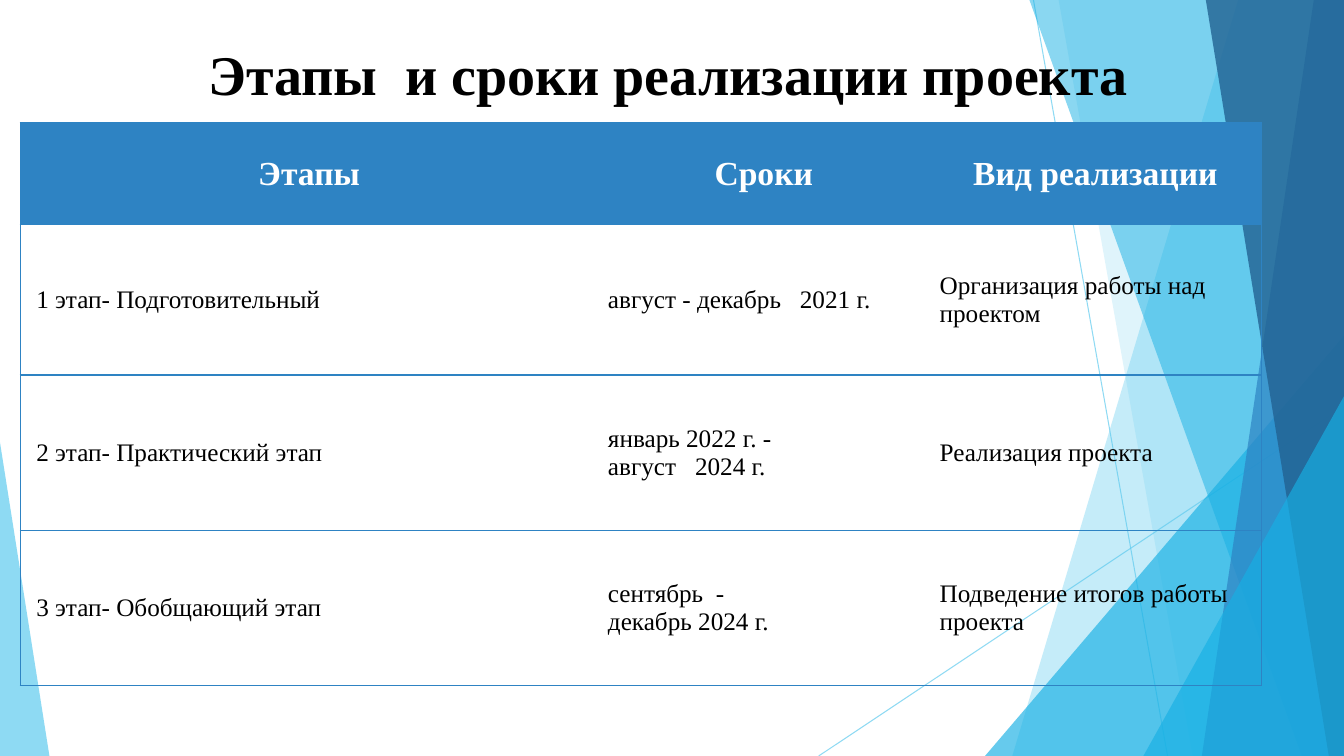
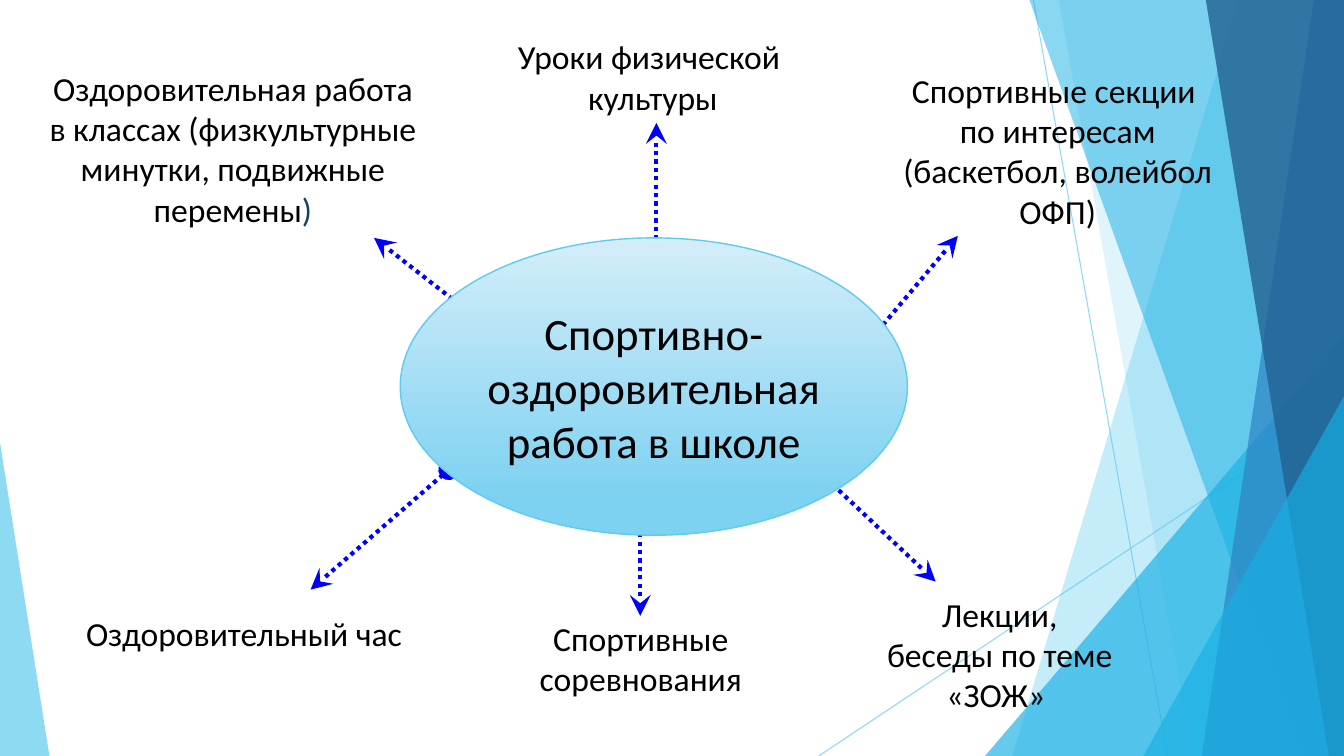
from lxml.etree import SubElement
from pptx import Presentation
from pptx.dml.color import RGBColor
from pptx.enum.dml import MSO_LINE
from pptx.enum.shapes import MSO_CONNECTOR, MSO_SHAPE
from pptx.enum.text import MSO_ANCHOR, MSO_AUTO_SIZE, PP_ALIGN
from pptx.oxml.ns import qn
from pptx.util import Inches, Pt

WIDTH, HEIGHT = 13.33, 7.5
SERIF, SANS = "Times New Roman", "Calibri"
COLORS = {
    "text": "000000", "white": "FFFFFF", "ink": "174162",
    "sky": "5FCBEF", "cyan": "17B0E4", "blue": "2E83C3", "navy": "226292",
    "arrow": "0000FF", "pale": "D4EEF9", "soft": "7DD1F1",
}
NO_TABLE_STYLE = "{2D5ABB26-0587-4C30-8999-92F81FD0307C}"

RAYS = [(10.25, 0, 11.58, HEIGHT), (WIDTH, 4.03, 8.12, HEIGHT)]
FACETS = [
    ("band", (12.28, 10.04), "sky", 36),
    ("band", (10.5, 11.83), "sky", 20),
    ("triangle", (9.77, 3.33, 3.56, 1), "cyan", 66),
    ("band", (10.21, 12.91), "cyan", 50),
    ("band", (13.03, 11.92), "blue", 70),
    ("band", (11.96, 13.18), "navy", 80),
    ("triangle", (11.34, 3.93, 1.99, 1), "cyan", 66),
    ("triangle", (0, 4.39, 0.49, 0), "sky", 70),
]

TITLE = "Этапы  и сроки реализации проекта"
STAGES = [
    (["Этапы"], ["Сроки"], ["Вид реализации"]),
    (["1 этап- Подготовительный"], ["август - декабрь   2021 г."],
     ["Организация работы над", "проектом"]),
    (["2 этап- Практический этап"], ["январь 2022 г. -", "август   2024 г."],
     ["Реализация проекта"]),
    (["3 этап- Обобщающий этап"], ["сентябрь  -", "декабрь 2024 г."],
     ["Подведение итогов работы проекта"]),
]
COLUMN_WIDTHS = [5.73, 3.29, 3.29]
ROW_HEIGHTS = [1.01, 1.49, 1.54, 1.54]

HUB = ["Спортивно-оздоровительная работа в школе"]
ARROWS = [
    (3.71, 2.36, 4.81, 3.22), (6.51, 1.22, 6.51, 2.87), (9.5, 2.34, 8.23, 3.85),
    (3.08, 5.85, 4.45, 4.66), (6.35, 6.11, 6.35, 4.96), (9.28, 5.77, 8.23, 4.78),
]
ACTIVITIES = [
    ((0.32, 0.62, 3.98, 1.72), [
        "Оздоровительная работа",
        [("в классах (физкультурные минутки, подвижные перемены", "text"), (")", "ink")]]),
    ((4.89, 0.31, 3.17, 0.91), ["Уроки физической ", "культуры"]),
    ((8.64, 0.64, 3.7, 1.72), ["Спортивные секции ", "по интересам",
                               "(баскетбол, волейбол", "ОФП)"]),
    ((0.66, 6.03, 3.52, 0.5), ["Оздоровительный час"]),
    ((3.02, 6.08, 6.67, 0.91), ["Спортивные", "соревнования"]),
    ((8.47, 5.84, 2.89, 1.31), ["Лекции,", "беседы по теме «ЗОЖ» "]),
]


def rgb(name):
    return RGBColor.from_string(COLORS[name])


def inches(*lengths):
    return [Inches(length) for length in lengths]


def write_text(frame, lines, size, font=SANS, color="text", bold=False, align=PP_ALIGN.CENTER):
    for index, line in enumerate(lines):
        para = frame.paragraphs[0] if index == 0 else frame.add_paragraph()
        para.alignment = align
        for text, tint in [(line, color)] if isinstance(line, str) else line:
            span = para.add_run()
            span.text = text
            span.font.size = Pt(size)
            span.font.name = font
            span.font.bold = bold
            span.font.color.rgb = rgb(tint)


def set_alpha(element, percent):
    for tint in element.iter(qn("a:srgbClr")):
        SubElement(tint, qn("a:alpha"), val=str(percent * 1000))


def add_line(page, ends, color, width):
    line = page.shapes.add_connector(MSO_CONNECTOR.STRAIGHT, *inches(*ends))
    line.line.color.rgb = rgb(color)
    line.line.width = Pt(width)
    SubElement(line.element.spPr, qn("a:effectLst"))
    return line


def add_facet(page, kind, geometry, color, alpha):
    if kind == "band":
        top, bottom = geometry
        builder = page.shapes.build_freeform(*inches(top, 0))
        corners = [(WIDTH, 0), (WIDTH, HEIGHT), (bottom, HEIGHT)]
        builder.add_line_segments([inches(*corner) for corner in corners], close=True)
        facet = builder.convert_to_shape()
    else:
        left, top, width, apex = geometry
        facet = page.shapes.add_shape(MSO_SHAPE.ISOSCELES_TRIANGLE,
                                      *inches(left, top, width, HEIGHT - top))
        facet.adjustments[0] = apex
    facet.shadow.inherit = False
    facet.fill.solid()
    facet.fill.fore_color.rgb = rgb(color)
    facet.line.fill.background()
    set_alpha(facet.element.spPr, alpha)
    return facet


def decorate_master(deck, page):
    parts = [add_line(page, ray, "sky", 0.75) for ray in RAYS]
    for ray in parts:
        set_alpha(ray.element.spPr, 70)
    parts += [add_facet(page, *facet) for facet in FACETS]
    for number, part in enumerate(parts, start=100):
        part.element.xpath(".//p:cNvPr")[0].set("id", str(number))
        deck.slide_master.shapes.element.append(part.element)


def set_borders(cell, sides):
    properties = cell._tc.get_or_add_tcPr()
    for index, side in enumerate(sides):
        border = properties.makeelement(qn(f"a:{side}"), {"w": str(Pt(1))})
        fill = SubElement(border, qn("a:solidFill"))
        SubElement(fill, qn("a:srgbClr"), val=COLORS["blue"])
        properties.insert(index, border)


def add_stage_table(page):
    rows, columns = len(ROW_HEIGHTS), len(COLUMN_WIDTHS)
    frame = page.shapes.add_table(
        rows, columns, *inches(0.2, 1.22, sum(COLUMN_WIDTHS), sum(ROW_HEIGHTS)))
    frame.element.xpath(".//a:tableStyleId")[0].text = NO_TABLE_STYLE
    table = frame.table
    table.horz_banding = False
    for column, width in zip(table.columns, COLUMN_WIDTHS):
        column.width = Inches(width)
    for row, height in zip(table.rows, ROW_HEIGHTS):
        row.height = Inches(height)
    for r, stage in enumerate(STAGES):
        for c, lines in enumerate(stage):
            cell = table.cell(r, c)
            cell.vertical_anchor = MSO_ANCHOR.MIDDLE
            if r == 0:
                cell.fill.solid()
                cell.fill.fore_color.rgb = rgb("blue")
                write_text(cell.text_frame, lines, 24, SERIF, "white", bold=True)
            else:
                cell.fill.background()
                cell.margin_left = Inches(0.16 if c == 0 else 0.1)
                write_text(cell.text_frame, lines, 18, SERIF, align=PP_ALIGN.LEFT)
            edges = {"lnL": c == 0, "lnR": c == columns - 1, "lnT": True, "lnB": True}
            set_borders(cell, [side for side, shown in edges.items() if shown])


def fill_stages_page(page):
    title = page.shapes.title
    title.left, title.top, title.width, title.height = inches(0.98, 0.29, 11.29, 0.99)
    title.text_frame.vertical_anchor = MSO_ANCHOR.MIDDLE
    title.text_frame.margin_bottom = Inches(0.17)
    write_text(title.text_frame, [TITLE], 40, SERIF, bold=True)
    add_stage_table(page)


def add_arrow(page, ends):
    arrow = add_line(page, ends, "arrow", 3)
    arrow.line.dash_style = MSO_LINE.ROUND_DOT
    outline = arrow.element.spPr.find(qn("a:ln"))
    for end, kind in [("headEnd", "stealth"), ("tailEnd", "oval")]:
        SubElement(outline, qn(f"a:{end}"), type=kind, w="lg", len="lg")


def add_hub(page):
    hub = page.shapes.add_shape(MSO_SHAPE.OVAL, *inches(3.97, 2.36, 5.03, 2.95))
    hub.shadow.inherit = False
    hub.fill.gradient()
    hub.fill.gradient_angle = 270
    for stop, (position, color) in zip(hub.fill.gradient_stops, [(0, "pale"), (0.88, "soft")]):
        stop.position = position
        stop.color.rgb = rgb(color)
    hub.line.color.rgb = rgb("sky")
    hub.line.width = Pt(1)
    hub.text_frame.word_wrap = True
    hub.text_frame.vertical_anchor = MSO_ANCHOR.MIDDLE
    write_text(hub.text_frame, HUB, 32)


def fill_activities_page(page):
    for ends in ARROWS:
        add_arrow(page, ends)
    add_hub(page)
    for place, lines in ACTIVITIES:
        box = page.shapes.add_textbox(*inches(*place))
        box.text_frame.word_wrap = True
        box.text_frame.auto_size = MSO_AUTO_SIZE.SHAPE_TO_FIT_TEXT
        write_text(box.text_frame, lines, 24)


def main():
    deck = Presentation()
    deck.slide_width, deck.slide_height = inches(WIDTH, HEIGHT)
    title_only, blank = deck.slide_layouts[5], deck.slide_layouts[6]
    stages_page = deck.slides.add_slide(title_only)
    decorate_master(deck, stages_page)
    fill_stages_page(stages_page)
    fill_activities_page(deck.slides.add_slide(blank))
    deck.save("out.pptx")


if __name__ == "__main__":
    main()
